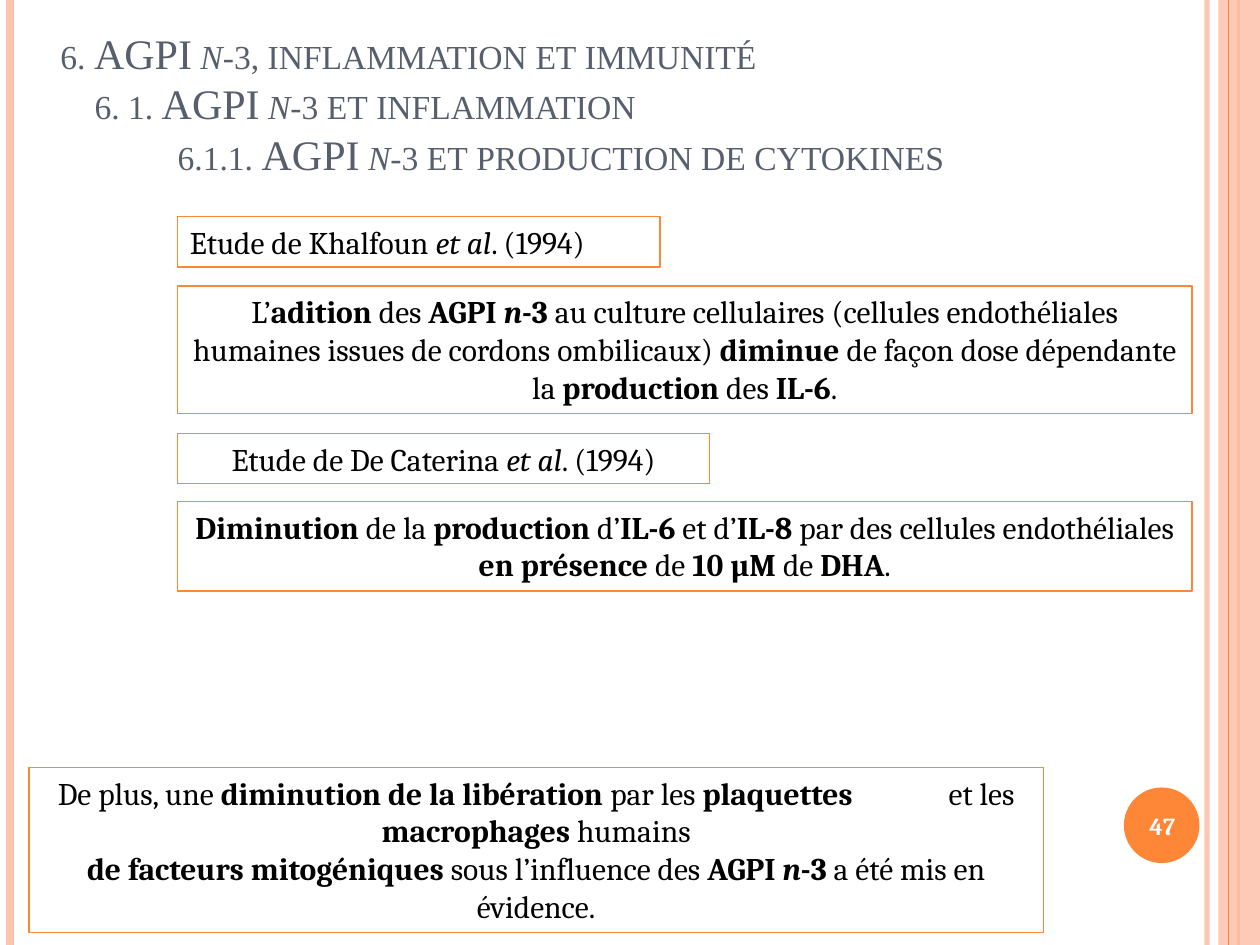
from dataclasses import dataclass

from lxml.etree import SubElement
from pptx import Presentation
from pptx.dml.color import RGBColor
from pptx.enum.shapes import MSO_CONNECTOR as Connector, MSO_SHAPE as Preset
from pptx.enum.text import MSO_ANCHOR as Anchor, MSO_AUTO_SIZE as AutoSize, PP_ALIGN as Align
from pptx.oxml.ns import qn
from pptx.util import Inches, Pt


@dataclass(frozen=True)
class Theme:
    orange: RGBColor = RGBColor.from_string("FE8637")
    peach: RGBColor = RGBColor.from_string("FEC3AE")
    slate: RGBColor = RGBColor.from_string("575F6D")
    black: RGBColor = RGBColor.from_string("000000")
    white: RGBColor = RGBColor.from_string("FFFFFF")
    title_font: str = "Times New Roman"
    body_font: str = "Cambria"
    title_size: int = 24
    title_spacing: int = 29
    body_size: int = 18
    number_size: int = 14
    border: float = 0.75


THEME = Theme()


@dataclass(frozen=True)
class Stripe:
    x: float
    color: RGBColor
    width: float
    opacity: int = 100


@dataclass(frozen=True)
class TitleLine:
    text: str
    indent: float


@dataclass(frozen=True)
class Panel:
    left: float
    top: float
    width: float
    height: float
    paragraphs: tuple[str, ...]
    align: Align = Align.CENTER
    tab: float | None = None


STRIPES = (
    Stripe(9.58, THEME.peach, 3, 93),
    Stripe(0.08, THEME.peach, 4.5),
    Stripe(9.83, THEME.orange, 1.5),
)
INNER_STRIPE = Stripe(9.75, THEME.orange, 0.75)

# In all wording below, * switches bold and _ switches italic.
TITLE_LINES = (
    TitleLine("6. AGPI _n_-3, inflammation et immunité", 0.07),
    TitleLine("6. 1. AGPI _n_-3 et inflammation", 0.34),
    TitleLine("6.1.1. AGPI _n_-3 et production de cytokines", 1.0),
)

STUDY_LEFT, WIDE = 1.41, 8.05
PANELS = (
    Panel(STUDY_LEFT, 1.72, 3.83, 0.4, ("Etude de Khalfoun _et al_. (1994)",), Align.LEFT),
    Panel(STUDY_LEFT, 2.27, WIDE, 1.01, (
        "L’*adition* des *AGPI _n_-3 *au culture cellulaires (cellules endothéliales "
        "humaines issues de cordons ombilicaux) *diminue* de façon dose dépendante "
        "la *production *des *IL-6*.",)),
    Panel(STUDY_LEFT, 3.98, WIDE, 0.71, (
        "*Diminution* de la *production *d’*IL-6 *et d’*IL-8* par des cellules "
        "endothéliales *en présence *de *10 µM* de *DHA*.",)),
    Panel(STUDY_LEFT, 3.44, 4.22, 0.4, ("Etude de De Caterina _et al_. (1994)",)),
    Panel(0.23, 6.09, WIDE, 1.31, (
        "De plus, une *diminution de la libération *par les *plaquettes*\tet les "
        "*macrophages *humains",
        "*de facteurs mitogéniques *sous l’influence des *AGPI _n_-3 *a été mis en évidence."),
        tab=7.07),
)


def add_runs(paragraph, marked: str, font: dict, color: RGBColor, small_caps: bool = False) -> None:
    """Split the marked wording at * and _ into bold and italic runs."""
    for bold_index, bold_part in enumerate(marked.split("*")):
        for italic_index, text in enumerate(bold_part.split("_")):
            if not text:
                continue
            run = paragraph.add_run()
            run.text = text
            values = font | {"bold": bold_index % 2 == 1, "italic": italic_index % 2 == 1}
            for name, value in values.items():
                setattr(run.font, name, value)
            run.font.color.rgb = color
            if small_caps:
                run.font._element.set("cap", "small")


def set_opacity(fill_parent, percent: int) -> None:
    color = fill_parent.find(f".//{qn('a:srgbClr')}")
    SubElement(color, qn("a:alpha")).set("val", str(percent * 1000))


def add_stripe(slide, stripe: Stripe, height: int) -> None:
    x = Inches(stripe.x)
    line = slide.shapes.add_connector(Connector.STRAIGHT, x, 0, x, height)
    line.line.color.rgb = stripe.color
    line.line.width = Pt(stripe.width)
    properties = line._element.spPr
    if stripe.opacity < 100:
        set_opacity(properties, stripe.opacity)
    SubElement(properties, qn("a:effectLst"))


def add_filled(slide, preset: Preset, box: tuple[float, ...], color: RGBColor):
    shape = slide.shapes.add_shape(preset, *map(Inches, box))
    shape.shadow.inherit = False
    shape.fill.solid()
    shape.fill.fore_color.rgb = color
    shape.line.fill.background()
    return shape


def add_frame(slide, height: int) -> None:
    for stripe in STRIPES:
        add_stripe(slide, stripe, height)
    band = add_filled(slide, Preset.RECTANGLE, (9.67, 0, 0.33, 7.5), THEME.peach)
    set_opacity(band._element.spPr, 87)
    add_stripe(slide, INNER_STRIPE, height)


def add_page_number(slide, number: str) -> None:
    add_filled(slide, Preset.OVAL, (8.92, 6.25, 0.6, 0.6), THEME.orange)
    frame = slide.shapes.add_textbox(*map(Inches, (8.89, 6.27, 0.67, 0.57))).text_frame
    frame.word_wrap = True
    frame.vertical_anchor = Anchor.MIDDLE
    paragraph = frame.paragraphs[0]
    paragraph.alignment = Align.CENTER
    font = {"name": THEME.body_font, "size": Pt(THEME.number_size)}
    add_runs(paragraph, f"*{number}*", font, THEME.white)


def fill_title(title) -> None:
    box = {"left": 0.31, "top": 0.08, "width": 9.69, "height": 1.72}
    for name, value in box.items():
        setattr(title, name, Inches(value))
    frame = title.text_frame
    frame.word_wrap = True
    frame.auto_size = AutoSize.NONE
    frame.vertical_anchor = Anchor.BOTTOM
    frame.margin_bottom = Inches(0.38)
    font = {"name": THEME.title_font, "size": Pt(THEME.title_size)}
    for index, line in enumerate(TITLE_LINES):
        paragraph = frame.add_paragraph() if index else frame.paragraphs[0]
        paragraph.alignment = Align.LEFT
        paragraph.line_spacing = Pt(THEME.title_spacing)
        paragraph.space_before = Pt(0)
        paragraph._p.get_or_add_pPr().set("marL", str(Inches(line.indent)))
        add_runs(paragraph, line.text, font, THEME.slate, small_caps=True)


def add_panel(slide, panel: Panel) -> None:
    box = (panel.left, panel.top, panel.width, panel.height)
    shape = slide.shapes.add_shape(Preset.RECTANGLE, *map(Inches, box))
    shape.shadow.inherit = False
    shape.fill.background()
    shape.line.color.rgb = THEME.orange
    shape.line.width = Pt(THEME.border)
    frame = shape.text_frame
    frame.word_wrap = True
    frame.auto_size = AutoSize.SHAPE_TO_FIT_TEXT
    frame.vertical_anchor = Anchor.TOP
    font = {"name": THEME.body_font, "size": Pt(THEME.body_size)}
    for index, text in enumerate(panel.paragraphs):
        paragraph = frame.add_paragraph() if index else frame.paragraphs[0]
        paragraph.alignment = panel.align
        if panel.tab and "\t" in text:
            tabs = SubElement(paragraph._p.get_or_add_pPr(), qn("a:tabLst"))
            SubElement(tabs, qn("a:tab"), pos=str(Inches(panel.tab)), algn="l")
        add_runs(paragraph, text, font, THEME.black)


def main() -> None:
    presentation = Presentation()
    presentation.slide_width, presentation.slide_height = Inches(10), Inches(7.5)
    slide = presentation.slides.add_slide(presentation.slide_layouts[5])
    add_frame(slide, presentation.slide_height)
    add_page_number(slide, "47")
    fill_title(slide.shapes.title)
    for panel in PANELS:
        add_panel(slide, panel)
    presentation.save("out.pptx")


if __name__ == "__main__":
    main()
